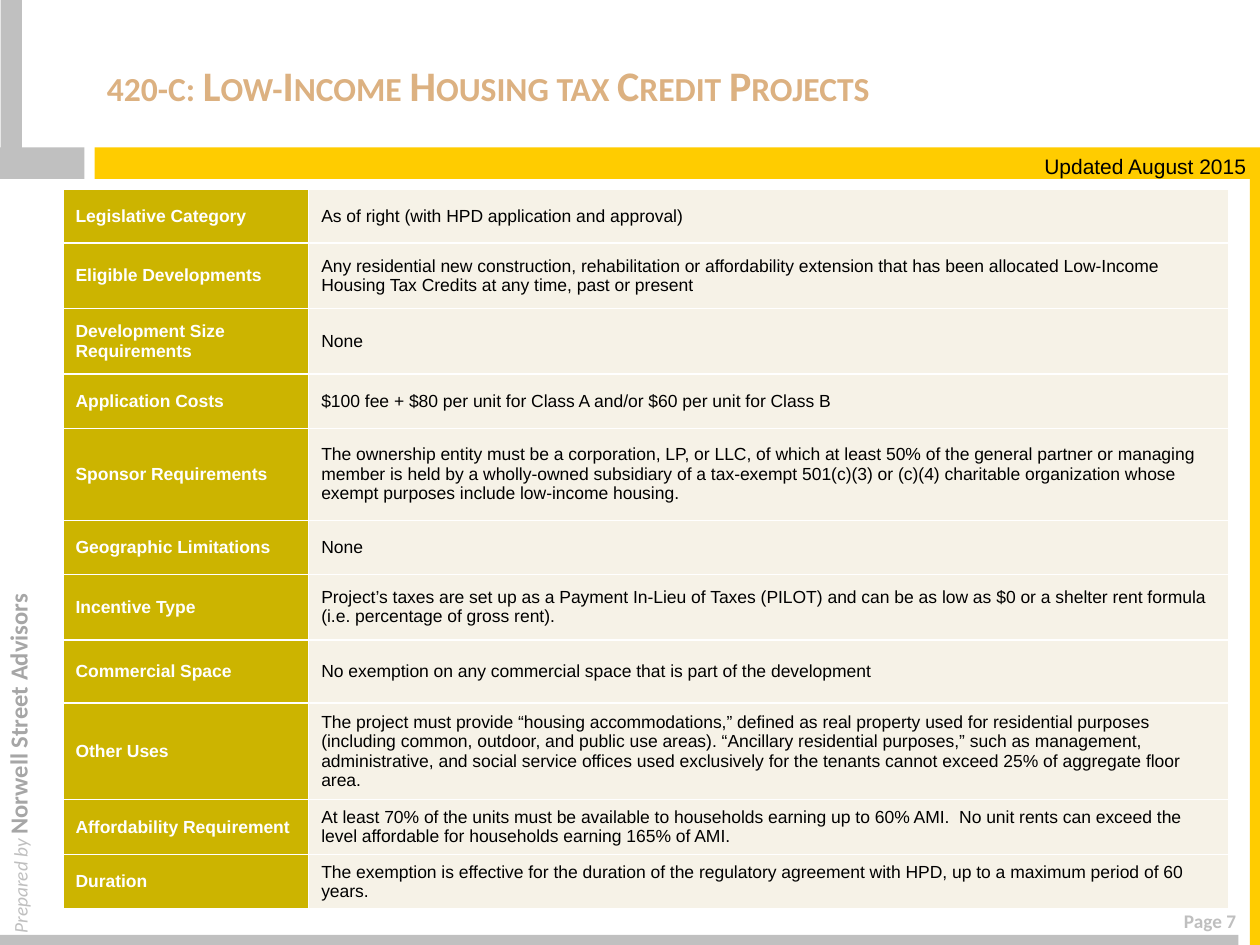
import pptx
import pptx.util
import pptx.dml.color
import pptx.enum.shapes
import pptx.enum.text
import pptx.oxml.ns
from lxml import etree

Inches = pptx.util.Inches
Pt = pptx.util.Pt
ALIGN = pptx.enum.text.PP_ALIGN
ANCHOR = pptx.enum.text.MSO_ANCHOR

COLORS = {
    "gray": "C0C0C0",
    "gold": "FFCC00",
    "pale": "BFBFBF",
    "dim": "A6A6A6",
    "tan": "DCB181",
    "olive": "CCB400",
    "cream": "F6F2E7",
    "white": "FFFFFF",
    "black": "000000",
}

BARS = [
    (0, 1.17, 0.67, 0.25, "gray", 0),
    (0.75, 1.17, 9.25, 0.25, "gold", 0),
    (9.92, 1.42, 0.08, 6.08, "gold", 0),
    (0, 7.42, 9.83, 0.08, "gray", 0),
    (-0.62, 0.62, 1.42, 0.17, "gray", 270),
]

ROWS = [
    (0.43, "Legislative Category", "As of right (with HPD application and approval)"),
    (0.52, "Eligible Developments",
     "Any residential new construction, rehabilitation or affordability extension that has been "
     "allocated Low-Income Housing Tax Credits at any time, past or present"),
    (0.52, "Development Size Requirements", "None"),
    (0.43, "Application Costs",
     "$100 fee + $80 per unit for Class A and/or $60 per unit for Class B"),
    (0.73, "Sponsor Requirements",
     "The ownership entity must be a corporation, LP, or LLC, of which at least 50% of the general "
     "partner or managing member is held by a wholly-owned subsidiary of a tax-exempt 501(c)(3) or "
     "(c)(4) charitable organization whose exempt purposes include low-income housing."),
    (0.43, "Geographic Limitations", "None"),
    (0.52, "Incentive Type",
     "Project’s taxes are set up as a Payment In-Lieu of Taxes (PILOT) and can be as low as $0 or "
     "a shelter rent formula (i.e. percentage of gross rent)."),
    (0.5, "Commercial Space",
     "No exemption on any commercial space that is part of the development"),
    (0.73, "Other Uses",
     "The project must provide “housing accommodations,” defined as real property used for "
     "residential purposes (including common, outdoor, and public use areas). “Ancillary "
     "residential purposes,” such as management, administrative, and social service offices used "
     "exclusively for the tenants cannot exceed 25% of aggregate floor area."),
    (0.43, "Affordability Requirement",
     "At least 70% of the units must be available to households earning up to 60% AMI.  No unit "
     "rents can exceed the level affordable for households earning 165% of AMI."),
    (0.43, "Duration",
     "The exemption is effective for the duration of the regulatory agreement with HPD, up to a "
     "maximum period of 60 years."),
]


def rgb(name):
    return pptx.dml.color.RGBColor.from_string(COLORS[name])


def style(font, size, color, face, bold=False, italic=False):
    font.size = Pt(size)
    font.name = face
    font.bold = bold
    font.italic = italic
    font.color.rgb = rgb(color)


def add_bar(slide, left, top, width, height, color, turn):
    bar = slide.shapes.add_shape(
        pptx.enum.shapes.MSO_SHAPE.RECTANGLE,
        Inches(left), Inches(top), Inches(width), Inches(height))
    bar.rotation = turn
    bar.shadow.inherit = False
    bar.fill.solid()
    bar.fill.fore_color.rgb = rgb(color)
    bar.line.fill.background()


def add_box(slide, left, top, width, height, wrap=True, turn=0):
    box = slide.shapes.add_textbox(Inches(left), Inches(top), Inches(width), Inches(height))
    box.rotation = turn
    box.text_frame.word_wrap = wrap
    return box.text_frame


def add_title(slide):
    frame = add_box(slide, 0.75, 0.17, 9.08, 1)
    frame.vertical_anchor = ANCHOR.MIDDLE
    run = frame.paragraphs[0].add_run()
    run.text = "420-c: Low-Income Housing tax Credit Projects"
    style(run.font, 24, "tan", "Calibri", bold=True)
    run._r.get_or_add_rPr().set("cap", "small")


def add_credit(slide):
    para = add_box(slide, -1.73, 5.46, 3.75, 0.34, turn=270).paragraphs[0]
    lead, firm = para.add_run(), para.add_run()
    lead.text = "Prepared by "
    firm.text = "Norwell Street Advisors"
    style(lead.font, 11, "pale", "Calibri", italic=True)
    style(firm.font, 14, "dim", "Calibri", bold=True)


def add_page(slide):
    para = add_box(slide, 6.58, 7.17, 3.33, 0.29).paragraphs[0]
    para.text = "Page 7"
    para.alignment = ALIGN.RIGHT
    style(para.font, 11, "pale", "Calibri", bold=True)


def add_date(slide):
    para = add_box(slide, 8.19, 1.17, 1.81, 0.3, wrap=False).paragraphs[0]
    para.text = "Updated August 2015"
    style(para.font, 12, "black", "Arial")


def set_edges(cell):
    props = cell._tc.get_or_add_tcPr()
    qn = pptx.oxml.ns.qn
    for spot, side in enumerate(("lnL", "lnR", "lnT", "lnB")):
        edge = etree.Element(qn("a:" + side), w=str(Pt(1)))
        fill = etree.SubElement(edge, qn("a:solidFill"))
        etree.SubElement(fill, qn("a:srgbClr"), val=COLORS["white"])
        props.insert(spot, edge)


def fill_cell(cell, text, back, color, bold):
    cell.fill.solid()
    cell.fill.fore_color.rgb = rgb(back)
    cell.vertical_anchor = ANCHOR.MIDDLE
    cell.text = text
    style(cell.text_frame.paragraphs[0].font, 10, color, "Arial", bold)
    set_edges(cell)


def add_terms(slide):
    total = sum(row[0] for row in ROWS)
    table = slide.shapes.add_table(
        len(ROWS), 2, Inches(0.5), Inches(1.5), Inches(9.25), Inches(total)).table
    table.first_row = False
    table.horz_banding = False
    table.columns[0].width = Inches(1.95)
    table.columns[1].width = Inches(7.3)
    for index, (height, label, detail) in enumerate(ROWS):
        table.rows[index].height = Inches(height)
        fill_cell(table.cell(index, 0), label, "olive", "white", True)
        fill_cell(table.cell(index, 1), detail, "cream", "black", False)


def main():
    deck = pptx.Presentation()
    deck.slide_width = Inches(10)
    deck.slide_height = Inches(7.5)
    slide = deck.slides.add_slide(deck.slide_layouts[6])
    for bar in BARS:
        add_bar(slide, *bar)
    add_page(slide)
    add_credit(slide)
    add_title(slide)
    add_terms(slide)
    add_date(slide)
    deck.save("out.pptx")


if __name__ == "__main__":
    main()
